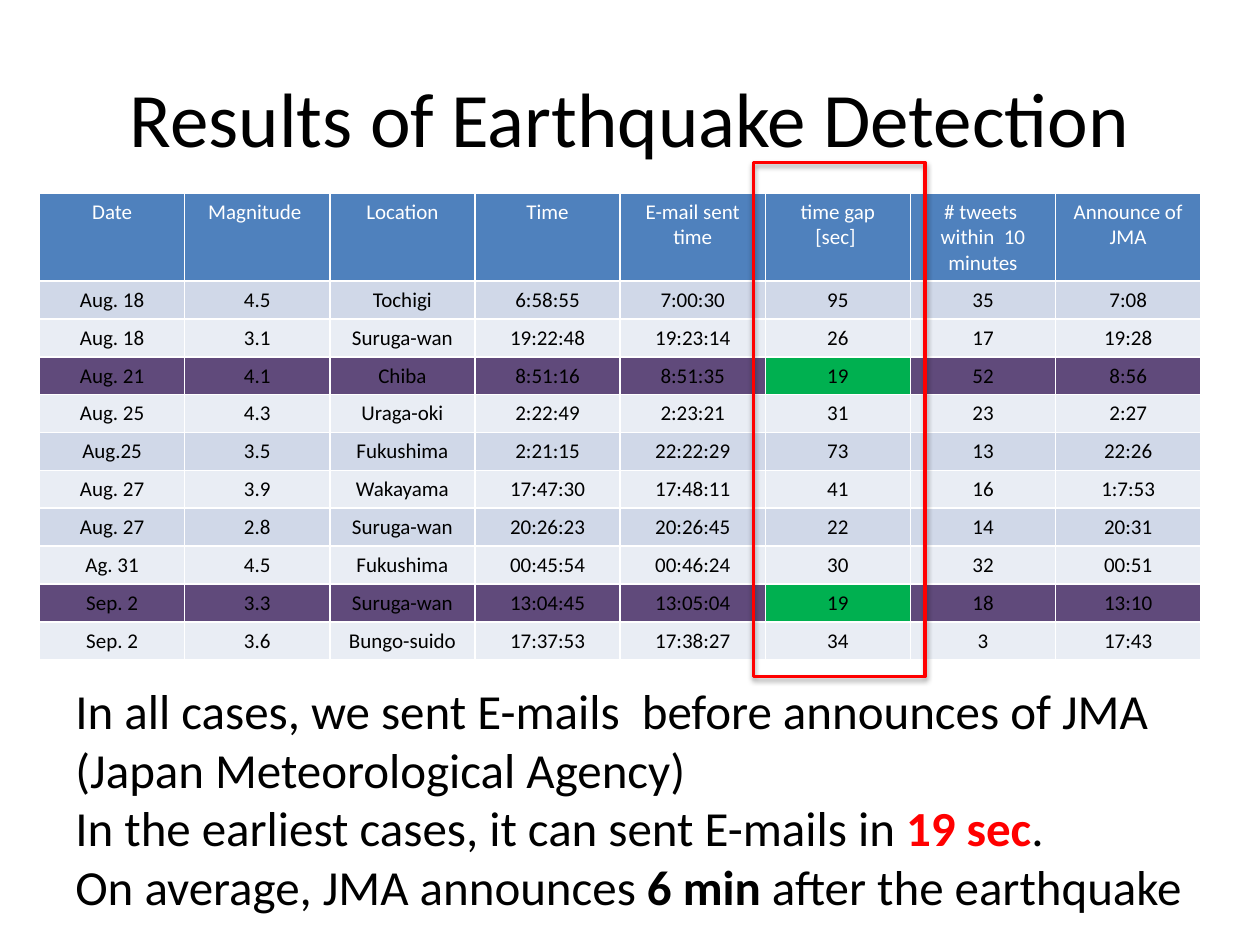
from lxml.etree import SubElement as Sub
from pptx import Presentation
from pptx.dml.color import RGBColor as RGB
from pptx.enum.shapes import MSO_SHAPE as Form
from pptx.enum.text import MSO_ANCHOR as Anchor, PP_ALIGN as Align
from pptx.oxml.ns import qn
from pptx.util import Pt

HEAD = ["Date", "Magnitude ", "Location", "Time", "E-mail sent time",
        "time gap\n[sec] ", "# tweets  within  10 minutes", "Announce of JMA"]
QUAKES = [
    ["Aug. 18", "4.5", "Tochigi", "6:58:55", "7:00:30", "95", "35", "7:08"],
    ["Aug. 18", "3.1", "Suruga-wan", "19:22:48", "19:23:14", "26", "17", "19:28"],
    ["Aug. 21", "4.1", "Chiba", "8:51:16", "8:51:35", "19", "52", "8:56"],
    ["Aug. 25", "4.3", "Uraga-oki", "2:22:49", "2:23:21", "31", "23", "2:27"],
    ["Aug.25", "3.5", "Fukushima", "2:21:15", "22:22:29", "73", "13", "22:26"],
    ["Aug. 27", "3.9", "Wakayama", "17:47:30", "17:48:11", "41", "16", "1:7:53"],
    ["Aug. 27", "2.8", "Suruga-wan", "20:26:23", "20:26:45", "22", "14", "20:31"],
    ["Ag. 31", "4.5", "Fukushima", "00:45:54", "00:46:24", "30", "32", "00:51"],
    ["Sep. 2", "3.3", "Suruga-wan", "13:04:45", "13:05:04", "19", "18", "13:10"],
    ["Sep. 2", "3.6", "Bungo-suido", "17:37:53", "17:38:27", "34", "3", "17:43"],
]
GAP = 5
BEST = "19"
NOTES = [
    [("In all cases, we sent E-mails  before announces of JMA "
      "(Japan Meteorological Agency)", {})],
    [("In the earliest cases, it can sent E-mails in ", {}),
     ("19 sec", {"bold": True, "color": "FF0000"}), (".", {})],
    [("On average, JMA announces ", {}), ("6 min ", {"bold": True}),
     ("after the earthquake", {})],
]


def paint(color, code):
    color.rgb = RGB.from_string(code)


def style(font, **values):
    values = {"name": "Calibri", "bold": False, "color": "000000"} | values
    paint(font.color, values.pop("color"))
    for key, value in values.items():
        setattr(font, key, value)


def write(frame, paras, size, align=Align.LEFT):
    """Fill a text frame from paragraphs, each a list of (text, format) runs."""
    for i, runs in enumerate(paras):
        para = frame.add_paragraph() if i else frame.paragraphs[0]
        para.alignment = align
        for text, form in runs:
            run = para.add_run()
            run.text = text
            style(run.font, size=Pt(size), **form)


def add_text(slide, box, paras, size, align=Align.LEFT, anchor=Anchor.TOP):
    frame = slide.shapes.add_textbox(*map(Pt, box)).text_frame
    frame.word_wrap = True
    frame.vertical_anchor = anchor
    write(frame, paras, size, align)


def pick(row, col, data):
    """Choose the fill of a cell: header, best case or zebra stripe."""
    if row == 0:
        return "4F81BD"
    if data[GAP] == BEST:
        return "00B050" if col == GAP else "604A7B"
    return "D0D8E8" if row % 2 else "E9EDF4"


def add_grid(slide, box):
    rows = [HEAD] + QUAKES
    grid = slide.shapes.add_table(len(rows), len(HEAD), *map(Pt, box)).table
    for r, data in enumerate(rows):
        grid.rows[r].height = Pt(21.6 if r else 50.4)
        ink = "000000" if r else "FFFFFF"
        for c, text in enumerate(data):
            cell = grid.cell(r, c)
            cell.fill.solid()
            paint(cell.fill.fore_color, pick(r, c, data))
            paras = [[(line, {"color": ink})] for line in text.split("\n")]
            write(cell.text_frame, paras, 12, Align.CENTER)


def add_shade(shape):
    """Give a shape a soft shadow that falls straight down."""
    shape.shadow.inherit = False
    effects = shape._element.spPr.find(qn("a:effectLst"))
    shade = Sub(effects, qn("a:outerShdw"), blurRad=str(Pt(3.1)),
                dist=str(Pt(1.8)), dir="5400000", rotWithShape="0")
    color = Sub(shade, qn("a:srgbClr"), val="000000")
    Sub(color, qn("a:alpha"), val="35000")


def add_frame(slide, box):
    shape = slide.shapes.add_shape(Form.RECTANGLE, *map(Pt, box))
    shape.fill.background()
    paint(shape.line.color, "FF0000")
    shape.line.width = Pt(2)
    add_shade(shape)


def main():
    deck = Presentation()
    deck.slide_width, deck.slide_height = Pt(720), Pt(540)
    slide = deck.slides.add_slide(deck.slide_layouts[6])
    add_text(slide, (36, 21.6, 648, 90),
             [[("Results of Earthquake Detection", {})]],
             44, Align.CENTER, Anchor.MIDDLE)
    add_text(slide, (36, 385.2, 684, 143.3), NOTES, 28)
    add_grid(slide, (22.6, 110.2, 663.6, 266.4))
    add_frame(slide, (430.6, 92.9, 97.9, 293.8))
    deck.save("out.pptx")


if __name__ == "__main__":
    main()
